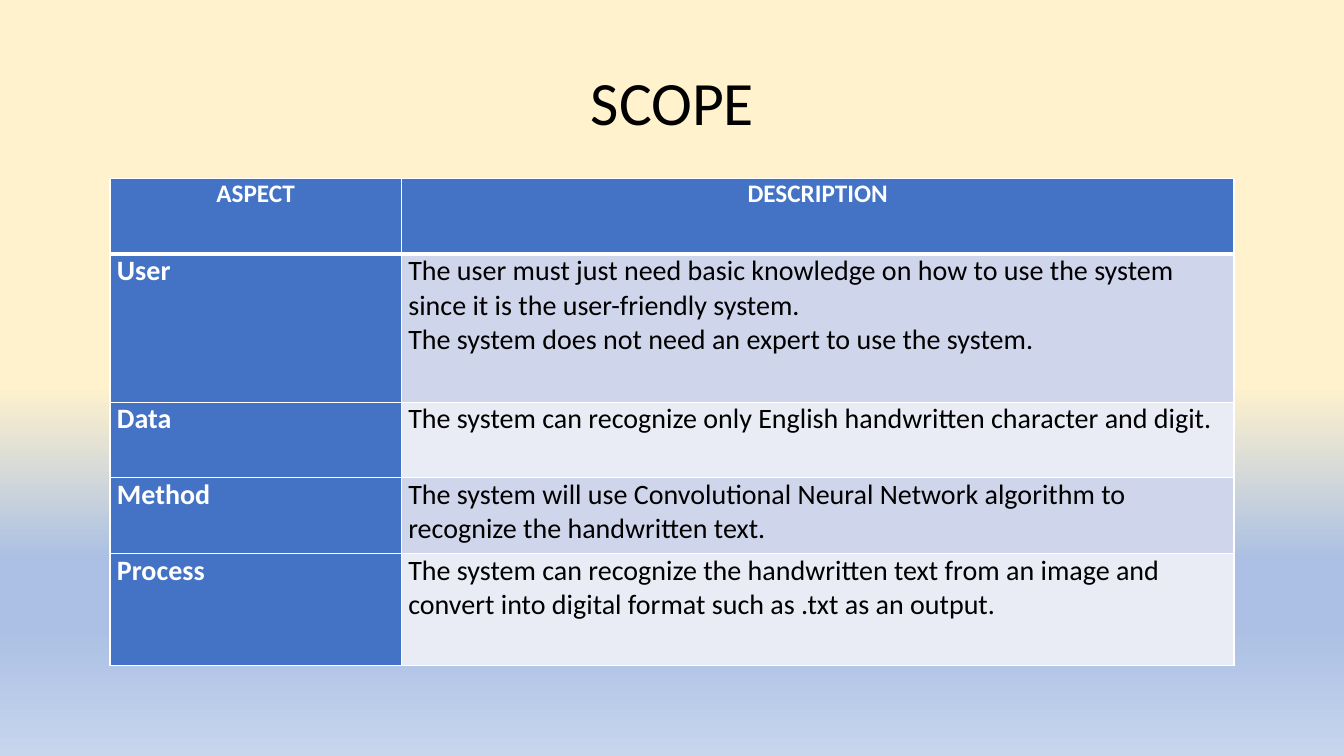
from dataclasses import dataclass

from lxml import etree
from pptx import Presentation
from pptx.dml.color import RGBColor
from pptx.enum.text import MSO_ANCHOR, PP_ALIGN
from pptx.oxml.ns import qn
from pptx.util import Inches, Pt

CENTER, LEFT = PP_ALIGN.CENTER, PP_ALIGN.LEFT
MIDDLE = MSO_ANCHOR.MIDDLE


@dataclass(frozen=True)
class Theme:
    font: str = "Calibri"
    title_size: int = 44
    header_size: int = 18
    body_size: int = 20
    dark: str = "000000"
    light: str = "FFFFFF"
    accent: str = "4472C4"
    bands: tuple = ("CFD5EA", "E9EBF5")
    background: tuple = ((51, "FFF2CC"), (74, "ABC0E4"), (83, "ABC0E4"), (100, "C7D5ED"))


theme = Theme()


def style_paragraph(p, size, color, bold=False, align=LEFT):
    p.alignment = align
    p.font.name = theme.font
    p.font.size = Pt(size)
    p.font.bold = bold
    p.font.color.rgb = RGBColor.from_string(color)


def set_borders(cell, widths):
    """Draw the left, right, top and bottom borders, with widths in points."""
    tcPr = cell._tc.get_or_add_tcPr()
    for side, width in zip("LRTB", widths):
        ln = etree.SubElement(tcPr, qn(f"a:ln{side}"), w=str(Pt(width)))
        fill = etree.SubElement(ln, qn("a:solidFill"))
        etree.SubElement(fill, qn("a:srgbClr"), val=theme.light)


prs = Presentation()
prs.slide_width, prs.slide_height = Inches(13.33), Inches(7.5)
s = prs.slides.add_slide(prs.slide_layouts[6])

# Background gradient, from top to bottom
bg = s.background.fill
bg.gradient()
bg.gradient_angle = 270
stops = next(s._element.iter(qn("a:gsLst")))
for stop in list(stops):
    stops.remove(stop)
for percent, color in theme.background:
    stop = etree.SubElement(stops, qn("a:gs"), pos=str(percent * 1000))
    etree.SubElement(stop, qn("a:srgbClr"), val=color)

# Title
title = s.shapes.add_textbox(Inches(0.92), Inches(0.32), Inches(11.5), Inches(1.45))
tf = title.text_frame
tf.word_wrap = True
tf.vertical_anchor = MIDDLE
p = tf.paragraphs[0]
p.text = "SCOPE"
p.line_spacing = 0.9
style_paragraph(p, theme.title_size, theme.dark, align=CENTER)

# Scope table
rows = [
    ("ASPECT", "DESCRIPTION"),
    ("User", "The user must just need basic knowledge on how to use the system "
             "since it is the user-friendly system.\n"
             "The system does not need an expert to use the system."),
    ("Data", "The system can recognize only English handwritten character and digit."),
    ("Method", "The system will use Convolutional Neural Network algorithm to "
               "recognize the handwritten text."),
    ("Process", "The system can recognize the handwritten text from an image and "
                "convert into digital format such as .txt as an output."),
]
col_widths = (2.89, 8.26)
row_heights = (0.75, 1.47, 0.75, 0.75, 1.11)

table = s.shapes.add_table(len(rows), len(col_widths), Inches(1.09), Inches(1.77),
                           Inches(sum(col_widths)), Inches(sum(row_heights))).table
for column, width in zip(table.columns, col_widths):
    column.width = Inches(width)
for row, height in zip(table.rows, row_heights):
    row.height = Inches(height)

for i, texts in enumerate(rows):
    is_header = i == 0
    for j, text in enumerate(texts):
        is_label = is_header or j == 0
        cell = table.cell(i, j)
        cell.margin_left = cell.margin_right = Inches(0.07)
        cell.margin_top = cell.margin_bottom = 0
        set_borders(cell, (1, 1, 3 if i == 1 else 1, 3 if is_header else 1))
        cell.fill.solid()
        cell.fill.fore_color.rgb = RGBColor.from_string(
            theme.accent if is_label else theme.bands[(i - 1) % 2])
        cell.text = text
        for p in cell.text_frame.paragraphs:
            style_paragraph(p, theme.header_size if is_header else theme.body_size,
                            theme.light if is_label else theme.dark,
                            bold=is_label, align=CENTER if is_header else LEFT)

prs.save("out.pptx")
